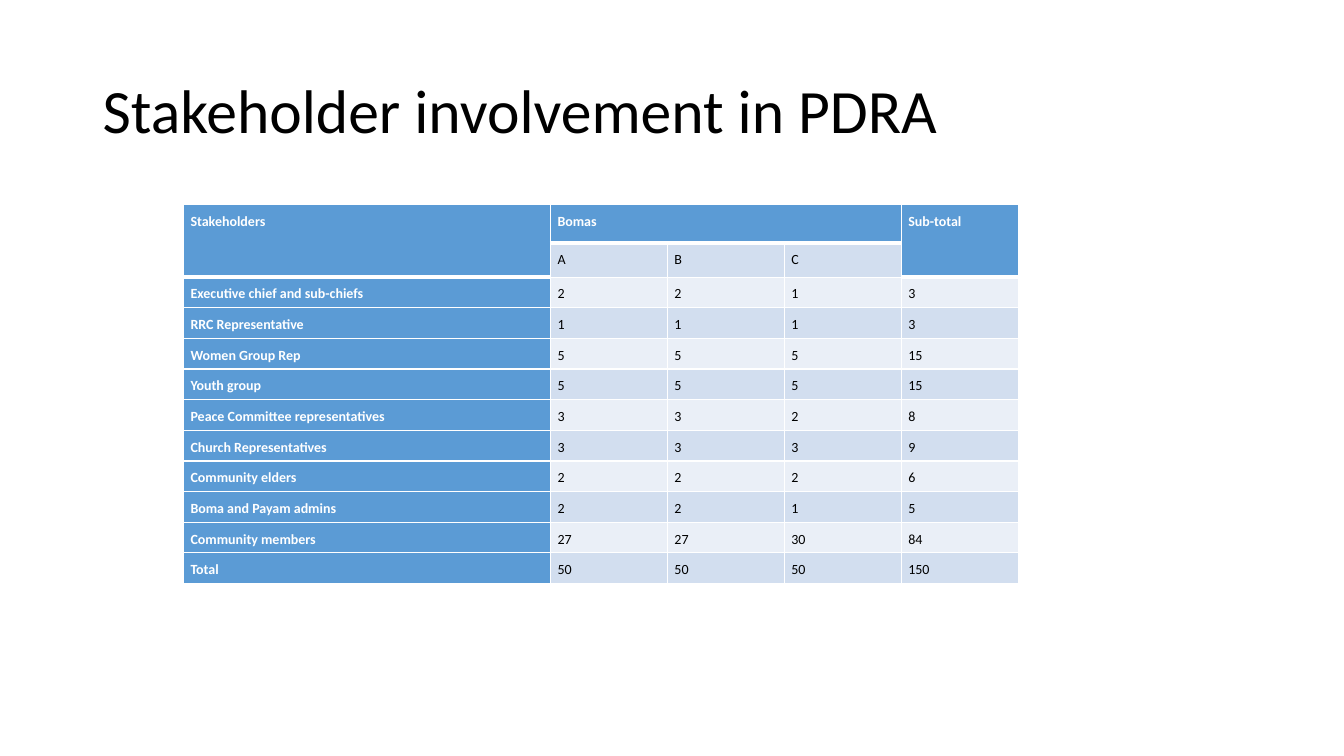
from dataclasses import dataclass

from lxml import etree
from pptx import Presentation, util as u
from pptx.dml.color import RGBColor
from pptx.enum import text as t
from pptx.oxml import ns


@dataclass(frozen=True)
class Theme:
    font: str = "Calibri"
    title: int = 44
    body: int = 10
    dark: str = "000000"
    light: str = "FFFFFF"
    head: str = "5B9BD5"
    bands: tuple = ("EAEFF7", "D2DEEF")
    thin: int = 1
    thick: int = 3


THEME = Theme()

ROWS = [
    ("Stakeholders", "Bomas", "", "", "Sub-total"),
    ("", "A", "B", "C", ""),
    ("Executive chief and sub-chiefs", 2, 2, 1, 3),
    ("RRC Representative", 1, 1, 1, 3),
    ("Women Group Rep", 5, 5, 5, 15),
    ("Youth group", 5, 5, 5, 15),
    ("Peace Committee representatives", 3, 3, 2, 8),
    ("Church Representatives", 3, 3, 3, 9),
    ("Community elders", 2, 2, 2, 6),
    ("Boma and Payam admins", 2, 2, 1, 5),
    ("Community members", 27, 27, 30, 84),
    ("Total", 50, 50, 50, 150),
]
SPANS = [((0, 0), (1, 0)), ((0, 1), (0, 3)), ((0, 4), (1, 4))]
LEFT, TOP, HIGH = 1.82, 2.03, 3.76
WIDTHS = [3.64] + [1.16] * 4
HEADS = [0.38, 0.34]


def style(para, size, color, bold=False):
    for run in para.runs:
        font = run.font
        font.name, font.size, font.bold = THEME.font, u.Pt(size), bold
        font.color.rgb = RGBColor.from_string(color)


def add_title(slide, words):
    box = slide.shapes.add_textbox(
        u.Inches(0.92), u.Inches(0.4), u.Inches(11.5), u.Inches(1.45))
    frame = box.text_frame
    frame.word_wrap = True
    frame.vertical_anchor = t.MSO_ANCHOR.MIDDLE
    frame.text = words
    para = frame.paragraphs[0]
    para.line_spacing = 0.9
    style(para, THEME.title, THEME.dark)


def in_head(row, col):
    return row == 0 or (row == 1 and col in (0, 4))


def add_edges(cell, top, bottom):
    # Border lines must come before the fill in the cell properties
    props = cell._tc.get_or_add_tcPr()
    sides = {"L": THEME.thin, "R": THEME.thin, "T": top, "B": bottom}
    for place, (side, width) in enumerate(sides.items()):
        line = etree.Element(ns.qn(f"a:ln{side}"), w=str(u.Pt(width)))
        fill = etree.SubElement(line, ns.qn("a:solidFill"))
        etree.SubElement(fill, ns.qn("a:srgbClr"), val=THEME.light)
        props.insert(place, line)


def fill_cell(cell, row, col, words):
    strong = col == 0 or in_head(row, col)
    cell.margin_left = cell.margin_right = u.Inches(0.07)
    cell.margin_top = cell.margin_bottom = 0
    cell.fill.solid()
    cell.fill.fore_color.rgb = RGBColor.from_string(
        THEME.head if strong else THEME.bands[row % 2])
    above = row > 0 and in_head(row - 1, col)
    add_edges(cell, THEME.thick if above else THEME.thin,
              THEME.thick if in_head(row, col) else THEME.thin)

    cell.text_frame.text = str(words)
    para = cell.text_frame.paragraphs[0]
    para.alignment = t.PP_ALIGN.JUSTIFY
    para.line_spacing = 1.5
    style(para, THEME.body, THEME.light if strong else THEME.dark, strong)


def add_grid(slide):
    table = slide.shapes.add_table(
        len(ROWS), len(WIDTHS), u.Inches(LEFT), u.Inches(TOP),
        u.Inches(sum(WIDTHS)), u.Inches(HIGH)).table

    # Two header rows, then equal rows in the space that is left
    count = len(ROWS) - len(HEADS)
    heights = HEADS + [(HIGH - sum(HEADS)) / count] * count
    for column, width in zip(table.columns, WIDTHS):
        column.width = u.Inches(width)
    for line, height in zip(table.rows, heights):
        line.height = u.Inches(height)

    for row, values in enumerate(ROWS):
        for col, words in enumerate(values):
            fill_cell(table.cell(row, col), row, col, words)
    for first, last in SPANS:
        table.cell(*first).merge(table.cell(*last))


def main():
    deck = Presentation()
    deck.slide_width, deck.slide_height = u.Inches(13.33), u.Inches(7.5)
    slide = deck.slides.add_slide(deck.slide_layouts[6])
    add_title(slide, "Stakeholder involvement in PDRA")
    add_grid(slide)
    deck.save("out.pptx")


if __name__ == "__main__":
    main()
